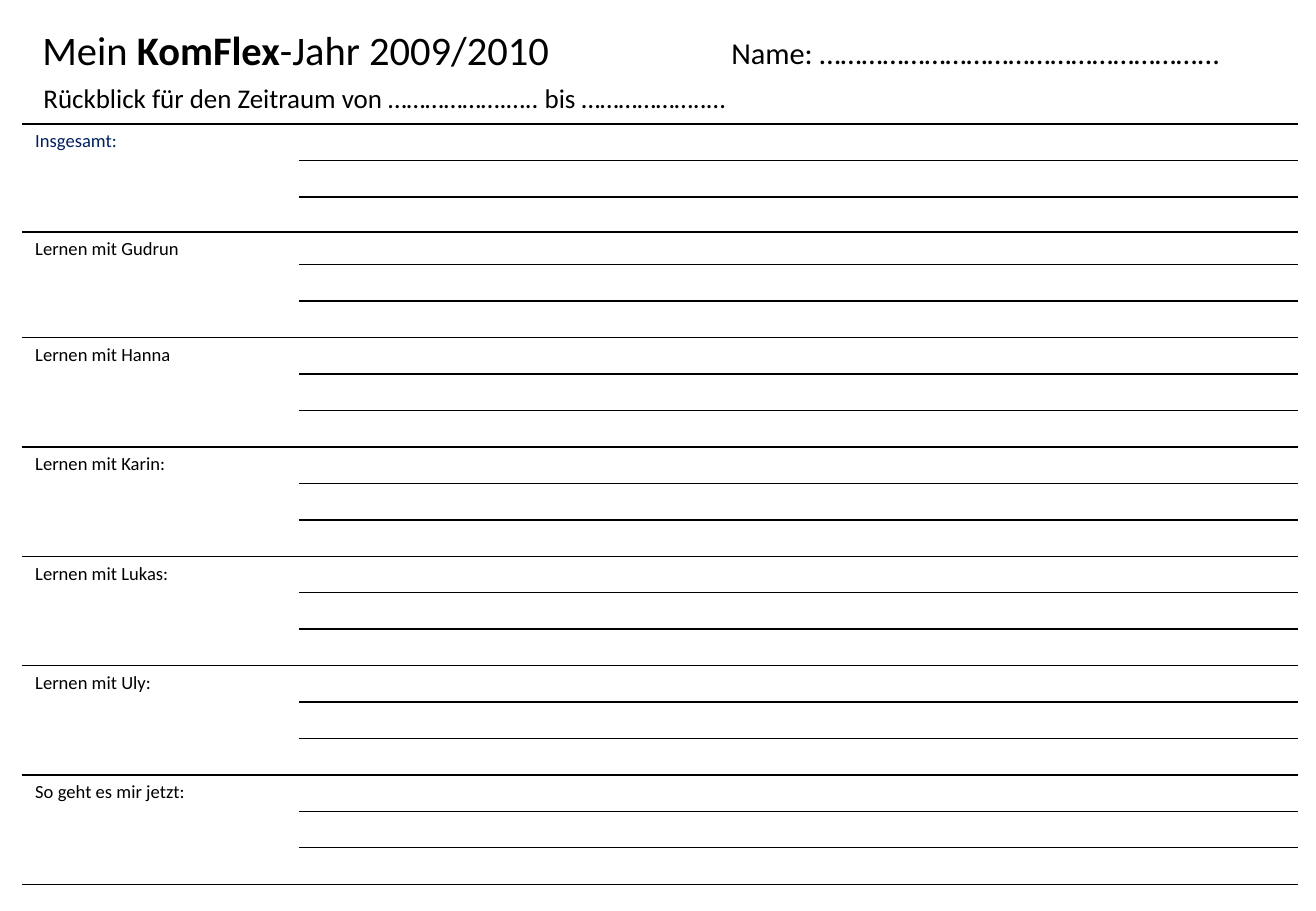
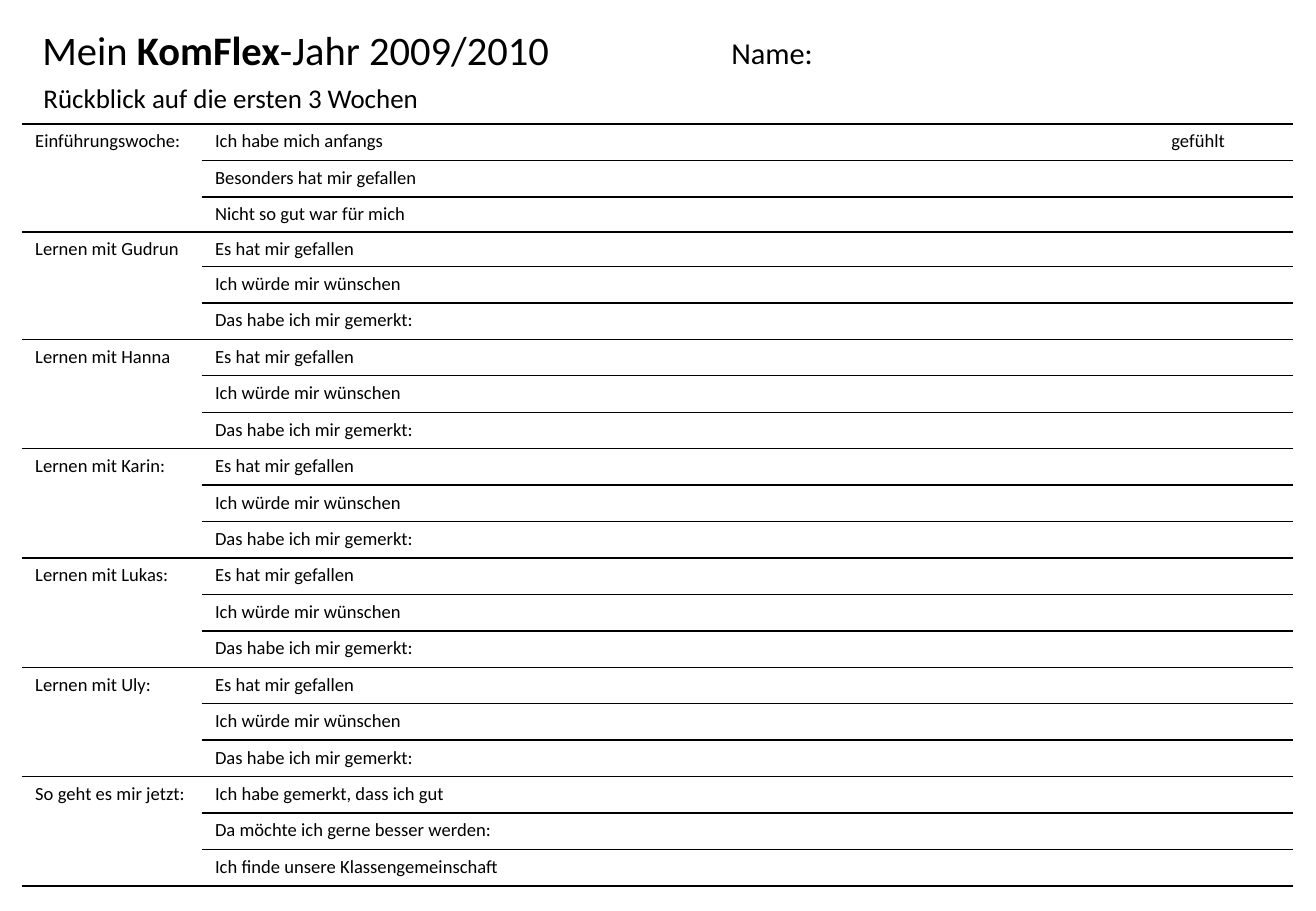
from lxml import etree
from pptx import Presentation
from pptx.dml.color import RGBColor
from pptx.enum.text import MSO_AUTO_SIZE
from pptx.oxml.ns import qn
from pptx.util import Inches, Pt

FIT_SHAPE = MSO_AUTO_SIZE.SHAPE_TO_FIT_TEXT
FONT = "Calibri"
BLACK = "000000"
NAVY = "002060"
NO_GRID_STYLE = "{2D5ABB26-0587-4C30-8999-92F81FD0307C}"
LINES_PER_TOPIC = 3
ROW_HEIGHT = 0.3
TIGHT_ROWS = {2: 0.29, 3: 0.27}
TABLE_LEFT, TABLE_TOP = 0.18, 1.02
CELL_MARGINS = {"margin_left": 0.11, "margin_right": 0.11,
                "margin_top": 0.05, "margin_bottom": 0.05}
TAB_POSITION = 7.87

PEOPLE = ["Lernen mit Gudrun", "Lernen mit Hanna", "Lernen mit Karin:",
          "Lernen mit Lukas:", "Lernen mit Uly:"]
CLOSING = "So geht es mir jetzt:"
PERSON_PROMPTS = ["Es hat mir gefallen", "Ich würde mir wünschen",
                  "Das habe ich mir gemerkt:"]
TITLE = [("Mein ", False), ("KomFlex", True), ("-Jahr 2009/2010", False)]

PAGES = [
    {"name": "Name: ………………………………………………...",
     "period": "Rückblick für den Zeitraum von ……………….….. bis ………………..…",
     "period_width": 5.87,
     "columns": [2.28, 1.32, 6.9],
     "topics": ["Insgesamt:", *PEOPLE, CLOSING],
     "first_color": NAVY,
     "prompts": []},
    {"name": "Name:",
     "period": "Rückblick auf die ersten 3 Wochen",
     "period_width": 3.43,
     "columns": [1.48, 8.98],
     "topics": ["Einführungswoche:", *PEOPLE, CLOSING],
     "first_color": BLACK,
     "prompts": ["Ich habe mich anfangs\tgefühlt",
                 "Besonders hat mir gefallen",
                 "Nicht so gut war für mich",
                 *PERSON_PROMPTS * len(PEOPLE),
                 "Ich habe gemerkt, dass ich gut",
                 "Da möchte ich gerne besser werden:",
                 "Ich finde unsere Klassengemeinschaft"]},
]


def add_span(para, text, size, color=BLACK, bold=False):
    span = para.add_run()
    span.text = text
    for key, value in {"name": FONT, "size": Pt(size), "bold": bold}.items():
        setattr(span.font, key, value)
    span.font.color.rgb = RGBColor.from_string(color)


def rule_cell(cell):
    """Draw a thin black line above and below the cell."""
    properties = cell.fill._xPr
    for position, edge in enumerate(("a:lnT", "a:lnB")):
        line = etree.Element(qn(edge), w=str(Pt(1)))
        fill = etree.SubElement(line, qn("a:solidFill"))
        etree.SubElement(fill, qn("a:srgbClr"), val=BLACK)
        properties.insert(position, line)


deck = Presentation()
deck.slide_width = Inches(10.83)
deck.slide_height = Inches(7.5)

for content in PAGES:
    page = deck.slides.add_slide(deck.slide_layouts[6])

    # Ruled form: one merged label cell per topic, three writing lines beside it
    columns, topics, prompts = content["columns"], content["topics"], content["prompts"]
    heights = [TIGHT_ROWS.get(row, ROW_HEIGHT)
               for row in range(len(topics) * LINES_PER_TOPIC)]
    frame = page.shapes.add_table(
        len(heights), len(columns), Inches(TABLE_LEFT), Inches(TABLE_TOP),
        Inches(sum(columns)), Inches(sum(heights)))
    next(frame.element.iter(qn("a:tableStyleId"))).text = NO_GRID_STYLE
    form = frame.table
    form.first_row = form.horz_banding = False
    for column, width in zip(form.columns, columns):
        column.width = Inches(width)

    for row, height in enumerate(heights):
        form.rows[row].height = Inches(height)
        topic, line_in_topic = divmod(row, LINES_PER_TOPIC)
        if line_in_topic == 0:
            form.cell(row, 0).merge(form.cell(row + LINES_PER_TOPIC - 1, 0))
        for column in range(len(columns)):
            cell = form.cell(row, column)
            for side, margin in CELL_MARGINS.items():
                setattr(cell, side, Inches(margin))
            cell.fill.background()
            if not cell.is_spanned:
                rule_cell(cell)

            para = cell.text_frame.paragraphs[0]
            if column == 0 and line_in_topic == 0:
                color = content["first_color"] if topic == 0 else BLACK
                add_span(para, topics[topic], 11, color)
            elif column == 1 and prompts:
                add_span(para, prompts[row], 11)
                if "\t" in prompts[row]:
                    tabs = etree.SubElement(para._p.get_or_add_pPr(), qn("a:tabLst"))
                    etree.SubElement(tabs, qn("a:tab"),
                                     pos=str(Inches(TAB_POSITION)), algn="l")
            else:
                # Small empty text keeps the row at its set height
                etree.SubElement(para._p, qn("a:endParaRPr"), sz=str(Pt(10).centipoints))

    # Heading
    headings = [
        (0.25, 0.16, 4.74, 0.5, 24, True, TITLE),
        (5.92, 0.23, 4.57, 0.4, 18, True, [(content["name"], False)]),
        (0.26, 0.62, content["period_width"], 0.37, 16, False,
         [(content["period"], False)]),
    ]
    for left, top, width, height, size, wrap, spans in headings:
        box = page.shapes.add_textbox(Inches(left), Inches(top),
                                      Inches(width), Inches(height))
        box.text_frame.word_wrap = wrap
        box.text_frame.auto_size = FIT_SHAPE
        for text, bold in spans:
            add_span(box.text_frame.paragraphs[0], text, size, bold=bold)

deck.save("out.pptx")
